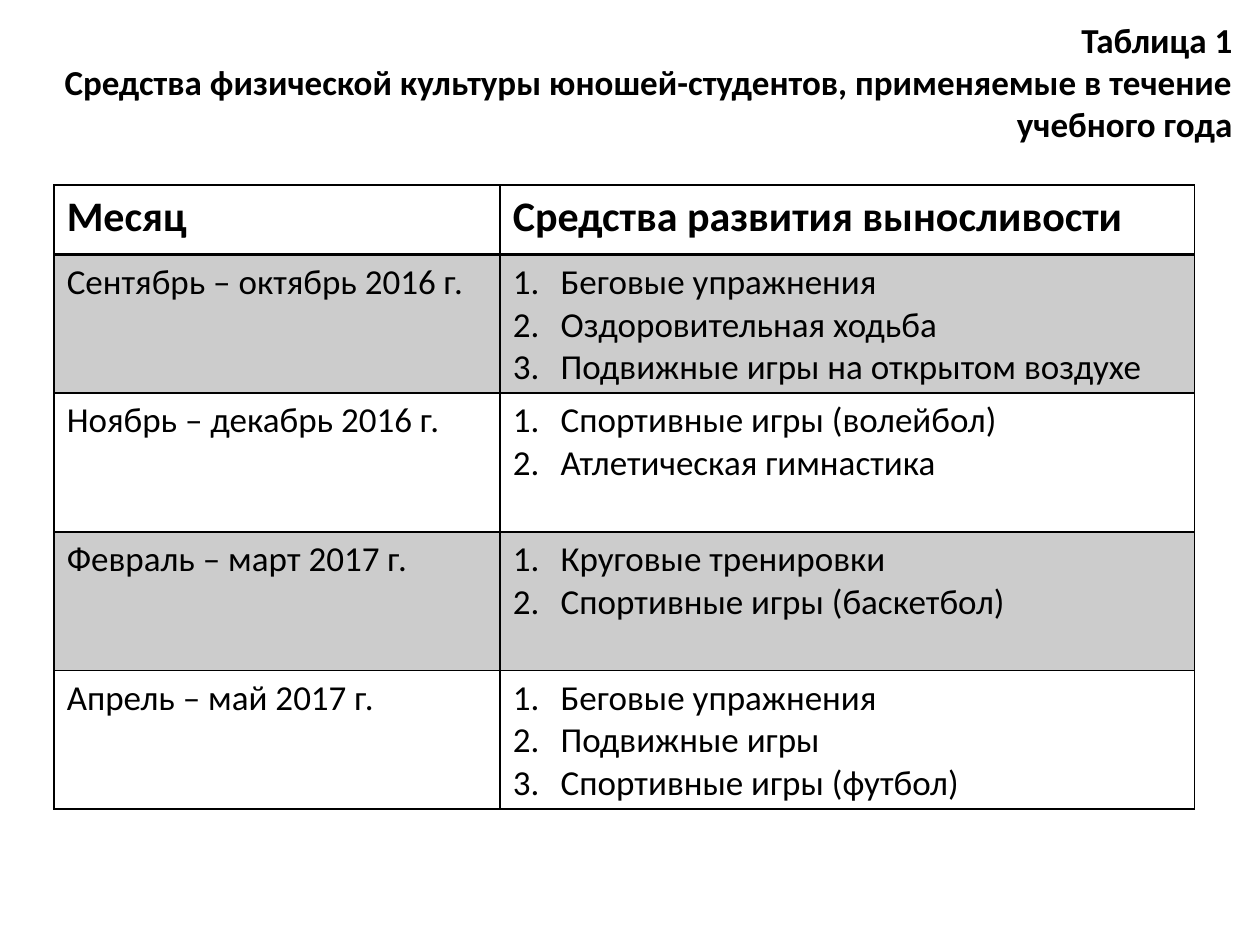
"""Builds a slide with a table of endurance training means by month."""
from lxml import etree
from pptx import Presentation
from pptx import util as u
from pptx.dml.color import RGBColor
from pptx.enum import text
from pptx.oxml import ns

BLACK = RGBColor(0, 0, 0)
FONT = "Calibri"
TITLE = [
    "Таблица 1",
    "Средства физической культуры юношей-студентов, применяемые в течение учебного года",
]
HEADERS = ["Месяц", "Средства развития выносливости"]
MONTHS = [
    ("Сентябрь – октябрь 2016 г.",
     ["Беговые упражнения", "Оздоровительная ходьба", "Подвижные игры на открытом воздухе"]),
    ("Ноябрь – декабрь 2016 г.", ["Спортивные игры (волейбол)", "Атлетическая гимнастика"]),
    ("Февраль – март 2017 г.", ["Круговые тренировки", "Спортивные игры (баскетбол)"]),
    ("Апрель – май 2017 г.", ["Беговые упражнения", "Подвижные игры", "Спортивные игры (футбол)"]),
]
COLUMN_WIDTHS = [3.54, 5.51]
HEADER_HEIGHT, MONTH_HEIGHT = 0.55, 1.1


class SlideBuilder:
    def __init__(self, page):
        self.page = page

    def add_lines(self, frame, lines, size, bold=False, numbered=False, align=text.PP_ALIGN.LEFT):
        for index, line in enumerate(lines):
            para = frame.paragraphs[0] if index == 0 else frame.add_paragraph()
            para.text = line
            para.alignment = align
            if numbered:
                self.number(para)
            para.font.name = FONT
            para.font.size = u.Pt(size)
            para.font.bold = bold
            para.font.color.rgb = BLACK

    def number(self, para):
        props = para._p.get_or_add_pPr()
        indent = u.Inches(0.38)
        props.set("marL", str(indent))
        props.set("indent", str(-indent))
        etree.SubElement(props, ns.qn("a:buFont"), typeface="+mj-lt")
        etree.SubElement(props, ns.qn("a:buAutoNum"), type="arabicPeriod")

    def title(self, lines, left, top, width, height):
        box = self.page.shapes.add_textbox(*map(u.Inches, (left, top, width, height)))
        frame = box.text_frame
        frame.word_wrap = True
        frame.vertical_anchor = text.MSO_ANCHOR.MIDDLE
        self.add_lines(frame, lines, 20, bold=True, align=text.PP_ALIGN.RIGHT)

    def border(self, cell, side, points):
        props = cell._tc.get_or_add_tcPr()
        line = etree.SubElement(props, ns.qn(f"a:ln{side}"), w=str(u.Pt(points)))
        fill = etree.SubElement(line, ns.qn("a:solidFill"))
        etree.SubElement(fill, ns.qn("a:srgbClr"), val=str(BLACK))

    def shade(self, cell, shaded):
        if not shaded:
            cell.fill.background()
            return
        cell.fill.solid()
        cell.fill.fore_color.rgb = BLACK
        color = cell._tc.tcPr.find(ns.qn("a:solidFill"))[0]
        etree.SubElement(color, ns.qn("a:alpha"), val="20000")

    def table(self, left, top, widths, heights, rows):
        area = map(u.Inches, (left, top, sum(widths), sum(heights)))
        table = self.page.shapes.add_table(len(rows), len(widths), *area).table
        table.horz_banding = False
        table.first_row = False
        for column, width in zip(table.columns, widths):
            column.width = u.Inches(width)
        for index, (row, height) in enumerate(zip(table.rows, heights)):
            row.height = u.Inches(height)
            header = index == 0
            for column, (cell, lines) in enumerate(zip(row.cells, rows[index])):
                self.add_lines(cell.text_frame, lines, 24 if header else 20, bold=header,
                               numbered=column == 1 and not header)
                for side in "LRTB":
                    heavy = (index, side) in ((0, "B"), (1, "T"))
                    self.border(cell, side, 2 if heavy else 1)
                self.shade(cell, index % 2 == 1)


def main():
    deck = Presentation()
    deck.slide_width, deck.slide_height = u.Inches(10), u.Inches(7.5)
    builder = SlideBuilder(deck.slides.add_slide(deck.slide_layouts[6]))
    builder.title(TITLE, 0, 0.1, 9.88, 1.1)
    rows = [[[header] for header in HEADERS]]
    rows += [[[month], means] for month, means in MONTHS]
    heights = [HEADER_HEIGHT] + [MONTH_HEIGHT] * len(MONTHS)
    builder.table(0.43, 1.47, COLUMN_WIDTHS, heights, rows)
    deck.save("out.pptx")


if __name__ == "__main__":
    main()
